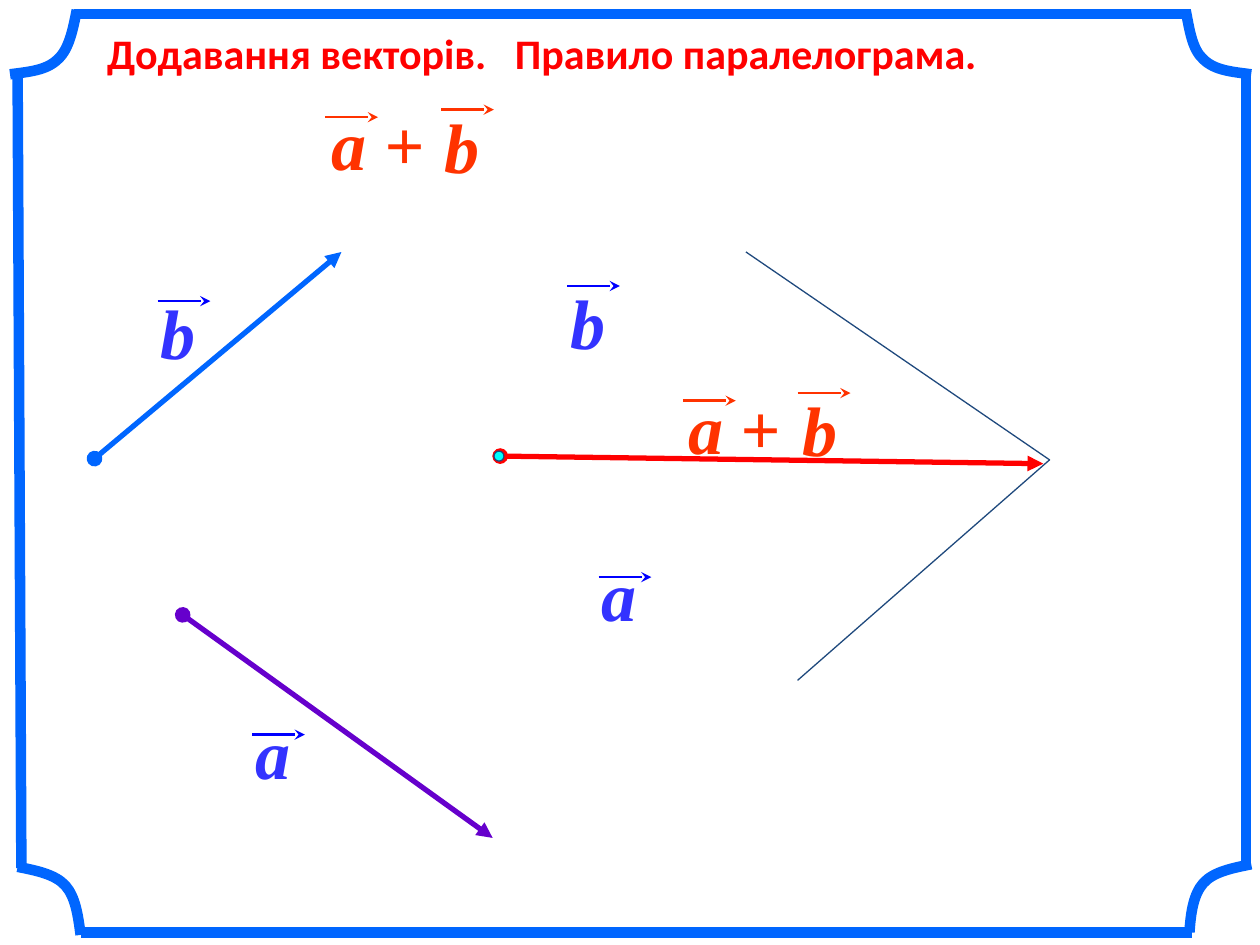
from lxml import etree
from pptx import Presentation
from pptx.dml.color import RGBColor
from pptx.enum.shapes import MSO_CONNECTOR, MSO_SHAPE
from pptx.enum.text import MSO_ANCHOR, PP_ALIGN
from pptx.oxml.ns import qn
from pptx.util import Inches, Pt

BLUE = RGBColor(0x00, 0x66, 0xFF)
PURPLE = RGBColor(0x66, 0x00, 0xCC)
RED = RGBColor(0xFF, 0x00, 0x00)
ORANGE = RGBColor(0xFF, 0x33, 0x00)
INDIGO = RGBColor(0x33, 0x33, 0xFF)
PURE_BLUE = RGBColor(0x00, 0x00, 0xFF)
NAVY = RGBColor(0x1F, 0x49, 0x7D)
CYAN = RGBColor(0x00, 0xFF, 0xFF)

TITLE = "Додавання векторів.   Правило паралелограма."

FRAME_SIDES = [
    ((0.59, 0.11), (9.45, 0.11)),
    ((0.64, 7.4), (9.46, 7.4)),
    ((9.89, 0.59), (9.89, 6.89)),
    ((0.14, 0.59), (0.17, 6.89)),
]
# Each corner: start point, then control, control, end for every Bezier piece
FRAME_CORNERS = [
    [(0.14, 6.88), (0.29, 6.91), (0.44, 6.94), (0.52, 7.03),
     (0.6, 7.12), (0.62, 7.27), (0.64, 7.42)],
    [(9.93, 6.86), (9.78, 6.89), (9.63, 6.92), (9.55, 7.01),
     (9.47, 7.1), (9.45, 7.25), (9.44, 7.4)],
    [(9.41, 0.08), (9.44, 0.23), (9.46, 0.39), (9.55, 0.47),
     (9.64, 0.56), (9.78, 0.57), (9.93, 0.59)],
    [(0.61, 0.08), (0.58, 0.23), (0.55, 0.39), (0.46, 0.47),
     (0.37, 0.56), (0.23, 0.57), (0.08, 0.59)],
]

VECTOR_A = ((1.45, 4.88), (3.91, 6.65), PURPLE)
VECTOR_B = ((0.75, 3.64), (2.71, 2), BLUE)
VECTOR_SUM = ((3.97, 3.62), (8.28, 3.68), RED)
PARALLELOGRAM_SIDES = [(5.92, 2), (8.33, 3.65), (6.33, 5.4)]
ORIGIN_DOT = (3.92, 3.58, 0.08)

# Each label is a group of (text, left, top, width, arrow left, arrow top)
LABELS = [
    (INDIGO, PURE_BLUE, [("a", 1.83, 5.58, 0.67, 2, 5.83)]),
    (INDIGO, PURE_BLUE, [("a", 4.58, 4.33, 0.67, 4.75, 4.58)]),
    (INDIGO, PURE_BLUE, [("b", 4.33, 2.17, 0.67, 4.5, 2.27)]),
    (ORANGE, ORANGE, [("b", 6.17, 3.02, 0.67, 6.33, 3.12),
                      ("a +", 5.08, 3, 1.5, 5.42, 3.18)]),
    (INDIGO, PURE_BLUE, [("b", 1.08, 2.25, 0.67, 1.25, 2.39)]),
    (ORANGE, ORANGE, [("b", 3.33, 0.77, 0.67, 3.5, 0.87),
                      ("a +", 2.25, 0.75, 1.5, 2.58, 0.93)]),
]
LABEL_HEIGHT = 0.77
LABEL_ARROW = 0.42


def add_run(p, text, font, size, color, italic=False):
    r = p.add_run()
    r.text = text
    r.font.name = font
    r.font.size = Pt(size)
    r.font.bold = True
    r.font.italic = italic
    r.font.color.rgb = color


def add_line(shapes, start, end, color, width, head=None, tail=None):
    """Draw a straight connector; head sits at start, tail at end."""
    x1, y1, x2, y2 = (Inches(v) for v in (*start, *end))
    line = shapes.add_connector(MSO_CONNECTOR.STRAIGHT, x1, y1, x2, y2)
    line.line.color.rgb = color
    line.line.width = Pt(width)
    sp_pr = line._element.spPr
    ln = sp_pr.find(qn("a:ln"))
    for tag, kind in (("a:headEnd", head), ("a:tailEnd", tail)):
        if kind:
            etree.SubElement(ln, qn(tag), type=kind)
    etree.SubElement(sp_pr, qn("a:effectLst"))


def add_path(shapes, points, color, width):
    """Draw an open, unfilled polyline."""
    builder = shapes.build_freeform(Inches(points[0][0]), Inches(points[0][1]))
    builder.add_line_segments(
        [(Inches(x), Inches(y)) for x, y in points[1:]], close=False)
    sp = builder.convert_to_shape()
    sp.fill.background()
    sp.line.color.rgb = color
    sp.line.width = Pt(width)
    sp.shadow.inherit = False
    return sp


def bend(sp):
    """Turn every three line segments into one cubic Bezier segment."""
    path = next(sp._element.iter(qn("a:path")))
    segments = path.findall(qn("a:lnTo"))
    for i in range(0, len(segments), 3):
        curve = etree.SubElement(path, qn("a:cubicBezTo"))
        for segment in segments[i:i + 3]:
            curve.append(segment[0])
            path.remove(segment)


def add_frame(slide):
    shapes = slide.shapes.add_group_shape().shapes
    for start, end in FRAME_SIDES:
        add_line(shapes, start, end, BLUE, 6)
    for points in FRAME_CORNERS:
        bend(add_path(shapes, points, BLUE, 6))


def add_title(slide):
    title = slide.shapes.title
    title.left, title.top = Inches(0.75), Inches(0.17)
    title.width, title.height = Inches(8.83), Inches(0.51)
    tf = title.text_frame
    tf.vertical_anchor = MSO_ANCHOR.TOP
    p = tf.paragraphs[0]
    p.alignment = PP_ALIGN.LEFT
    add_run(p, TITLE, "Calibri", 24, RED)


def add_label(slide, text_color, arrow_color, parts):
    shapes = slide.shapes.add_group_shape().shapes
    for text, left, top, width, arrow_x, arrow_y in parts:
        box = shapes.add_textbox(Inches(left), Inches(top),
                                 Inches(width), Inches(LABEL_HEIGHT))
        tf = box.text_frame
        tf.word_wrap = True
        p = tf.paragraphs[0]
        p.alignment = PP_ALIGN.CENTER
        add_run(p, text, "Times New Roman", 40, text_color, italic=True)
        add_line(shapes, (arrow_x, arrow_y), (arrow_x + LABEL_ARROW, arrow_y),
                 arrow_color, 1.5, tail="stealth")


def add_origin_dot(slide):
    x, y, size = (Inches(v) for v in ORIGIN_DOT)
    dot = slide.shapes.add_shape(MSO_SHAPE.OVAL, x, y, size, size)
    dot.fill.solid()
    dot.fill.fore_color.rgb = CYAN
    dot.line.color.rgb = NAVY
    dot.line.width = Pt(0.75)
    dot.shadow.inherit = False


def main():
    prs = Presentation()
    prs.slide_width, prs.slide_height = Inches(10), Inches(7.5)
    slide = prs.slides.add_slide(prs.slide_layouts[5])

    add_frame(slide)
    add_title(slide)
    add_line(slide.shapes, *VECTOR_A, 3, head="oval", tail="triangle")
    for label in LABELS:
        add_label(slide, *label)
    add_line(slide.shapes, *VECTOR_B, 3, head="oval", tail="triangle")
    add_path(slide.shapes, PARALLELOGRAM_SIDES, NAVY, 0.75)
    add_line(slide.shapes, *VECTOR_SUM, 3, head="oval", tail="triangle")
    add_origin_dot(slide)

    prs.save("out.pptx")


if __name__ == "__main__":
    main()
